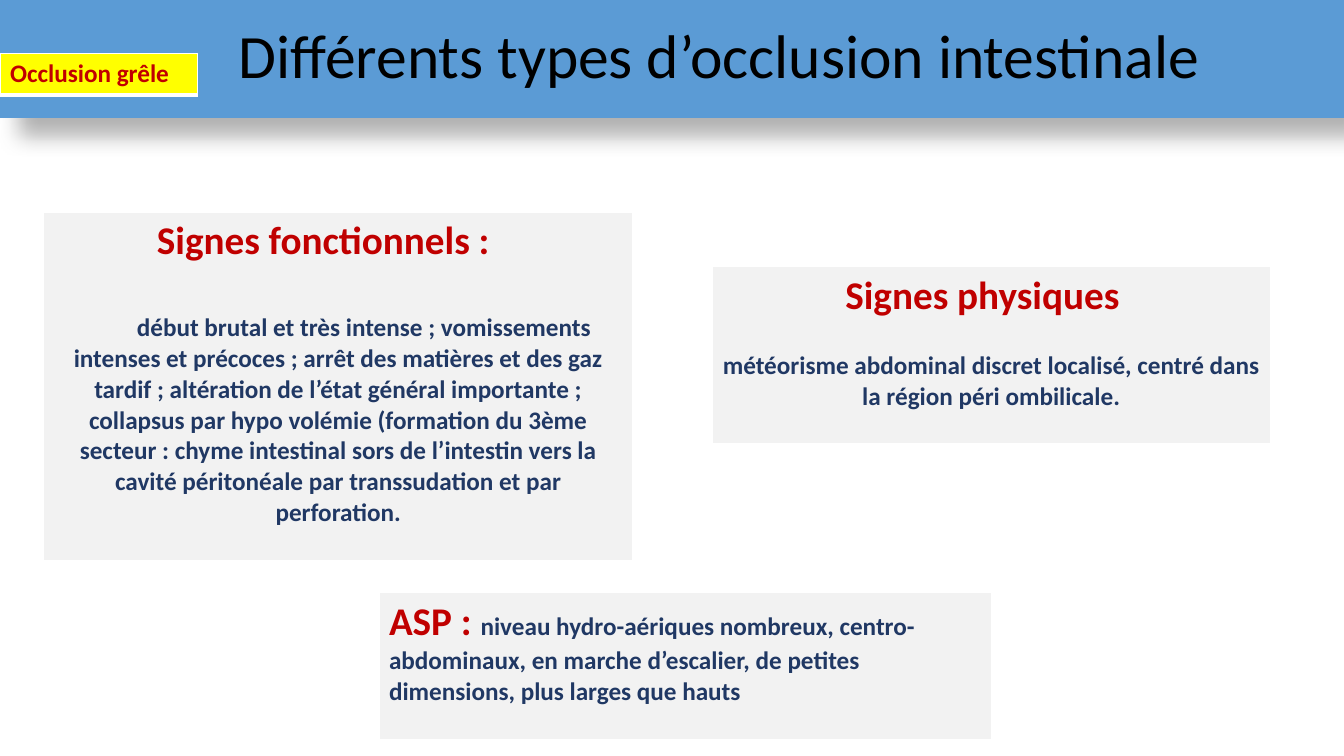
from lxml.etree import SubElement
from pptx import Presentation
from pptx.dml.color import RGBColor
from pptx.enum.shapes import MSO_SHAPE
from pptx.enum.text import MSO_ANCHOR, PP_ALIGN
from pptx.oxml import parse_xml
from pptx.oxml.ns import nsdecls, qn
from pptx.util import Cm, Pt

BLUE = RGBColor(0x5B, 0x9B, 0xD5)
BLACK = RGBColor(0x00, 0x00, 0x00)
YELLOW = RGBColor(0xFF, 0xFF, 0x00)
RED = RGBColor(0xC0, 0x00, 0x00)
NAVY = RGBColor(0x20, 0x38, 0x64)
GREY = RGBColor(0xF2, 0xF2, 0xF2)
SLIDE_WIDTH, SLIDE_HEIGHT = Cm(33.87), Cm(19.05)


class OcclusionSlide:
    """Hold the style and the slide, with a method for each kind of element."""

    font_name = "Calibri"
    heading_size, body_size = 28, 18

    def __init__(self, slide):
        self.slide = slide

    def style(self, font, size, color, bold=True):
        font.name, font.size, font.bold = self.font_name, Pt(size), bold
        font.color.rgb = color

    def indent(self, paragraph, distance):
        paragraph._p.get_or_add_pPr().set("indent", str(Cm(distance)))

    def banner(self, title, height):
        band = self.slide.shapes.add_shape(MSO_SHAPE.RECTANGLE, 0, 0, SLIDE_WIDTH, Cm(height))
        band.fill.solid()
        band.fill.fore_color.rgb = BLUE
        band.line.fill.background()
        band.shadow.inherit = False
        effects = band._element.spPr.find(qn("a:effectLst"))
        shadow = SubElement(effects, qn("a:outerShdw"), blurRad=str(Pt(15)), dist=str(Pt(18)),
                            dir="2700000", algn="tl", rotWithShape="0")
        shade = SubElement(shadow, qn("a:srgbClr"), val=str(BLACK))
        SubElement(shade, qn("a:alpha"), val="30000")
        band.text_frame.word_wrap = True
        band.text_frame.vertical_anchor = MSO_ANCHOR.MIDDLE
        heading = band.text_frame.paragraphs[0]
        heading.text = title
        heading.alignment = PP_ALIGN.CENTER
        heading.line_spacing = 0.9
        self.indent(heading, 2.4)
        self.style(heading.font, 44, BLACK, bold=False)

    def panel(self, left, top, width, height, fill):
        table = self.slide.shapes.add_table(1, 1, Cm(left), Cm(top), Cm(width), Cm(height)).table
        table.first_row = table.horz_banding = False
        cell = table.cell(0, 0)
        cell.fill.solid()
        cell.fill.fore_color.rgb = fill
        for position, (side, weight) in enumerate(zip("LRTB", (1, 1, 1, 3))):
            border = parse_xml(
                f'<a:ln{side} {nsdecls("a")} w="{Pt(weight)}"><a:solidFill>'
                f'<a:srgbClr val="FFFFFF"/></a:solidFill></a:ln{side}>')
            cell._tc.get_or_add_tcPr().insert(position, border)
        return cell.text_frame

    def tag(self, label, *box):
        line = self.panel(*box, YELLOW).paragraphs[0]
        line.text = label
        self.style(line.font, self.body_size, RED)

    def signs(self, title, findings, *box, title_indent, gap, findings_indent=0):
        frame = self.panel(*box, GREY)
        heading, body = frame.paragraphs[0], frame.add_paragraph()
        heading.text, body.text = title, findings
        self.style(heading.font, self.heading_size, RED)
        self.style(body.font, self.body_size, NAVY)
        self.indent(heading, title_indent)
        self.indent(body, findings_indent)
        body.alignment = PP_ALIGN.CENTER
        body.space_before = Pt(gap)

    def imaging(self, title, findings, *box):
        line = self.panel(*box, GREY).paragraphs[0]
        for text, size, color in ((title, self.heading_size, RED), (findings, self.body_size, NAVY)):
            run = line.add_run()
            run.text = text
            self.style(run.font, size, color)


def main():
    deck = Presentation()
    deck.slide_width, deck.slide_height = SLIDE_WIDTH, SLIDE_HEIGHT
    page = OcclusionSlide(deck.slides.add_slide(deck.slide_layouts[6]))
    page.banner("Différents types d’occlusion intestinale", 2.97)
    page.tag("Occlusion grêle", 0, 1.35, 4.98, 1.04)
    page.signs(
        "Signes fonctionnels :",
        "début brutal et très intense ; vomissements intenses et précoces ; arrêt des matières "
        "et des gaz tardif ; altération de l’état général importante ; collapsus par hypo volémie "
        "(formation du 3ème secteur : chyme intestinal sors de l’intestin vers la cavité "
        "péritonéale par transsudation et par perforation.",
        1.1, 5.35, 14.85, 8.8, title_indent=2.6, gap=34, findings_indent=1.3)
    page.imaging(
        "ASP : ",
        "niveau hydro-aériques nombreux, centro- abdominaux, en marche d’escalier, "
        "de petites dimensions, plus larges que hauts",
        9.55, 14.94, 15.43, 3.73)
    page.signs(
        "Signes physiques",
        "météorisme abdominal discret localisé, centré dans la région péri ombilicale.",
        17.95, 6.72, 14.06, 4.49, title_indent=3.1, gap=22)
    deck.save("out.pptx")


if __name__ == "__main__":
    main()
